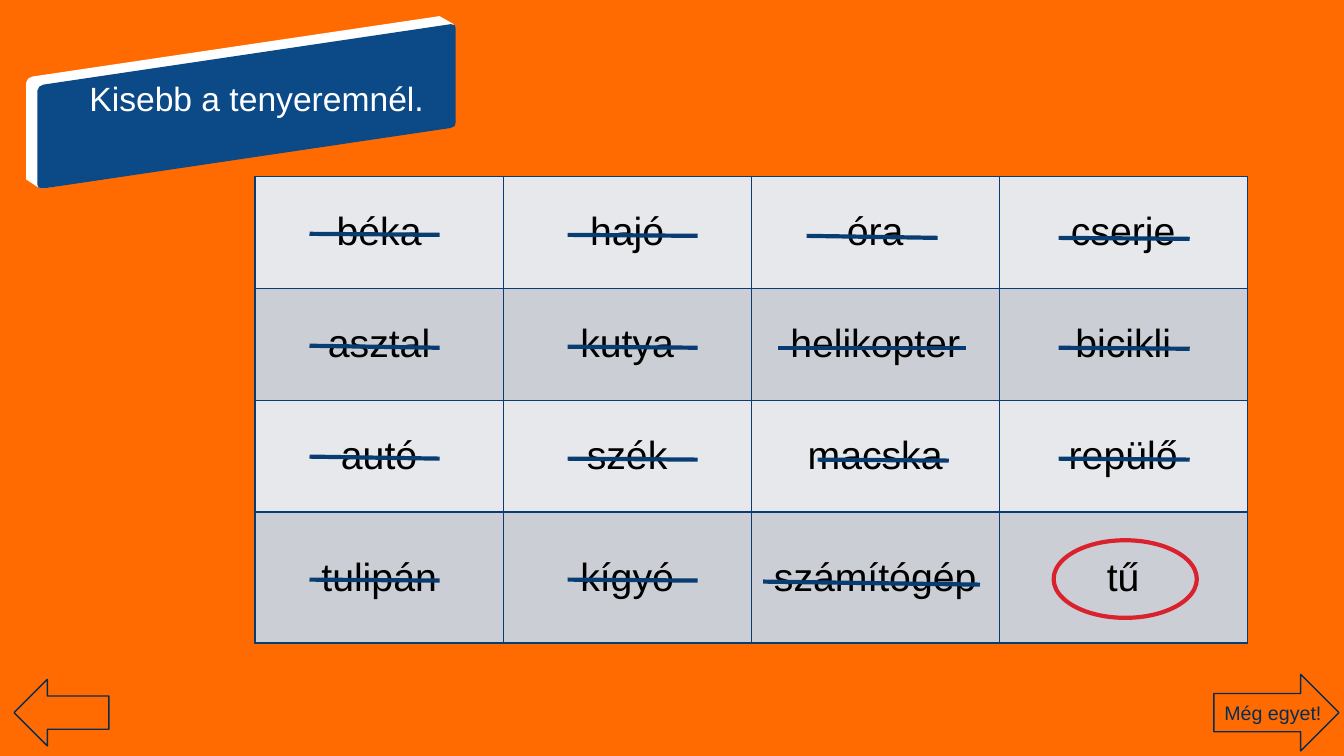
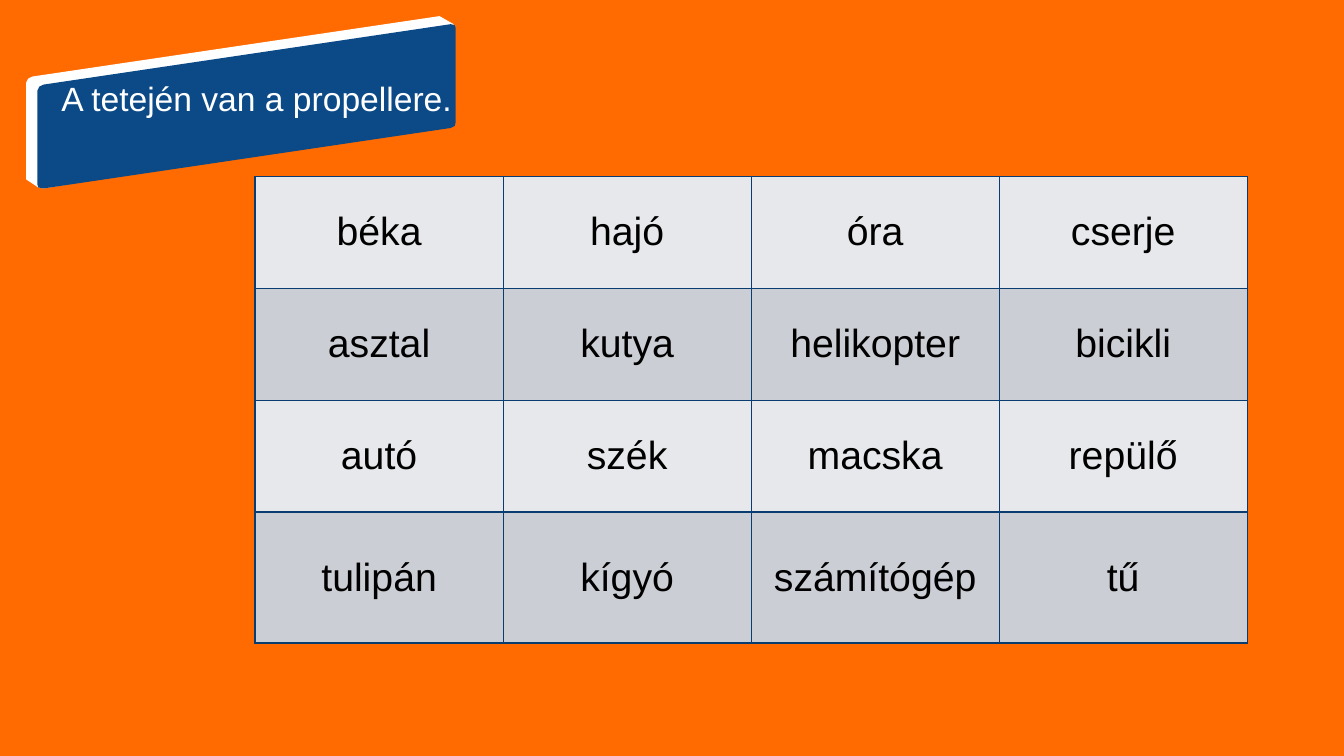
from lxml import etree
from pptx import Presentation
from pptx.dml.color import RGBColor
from pptx.enum.shapes import MSO_CONNECTOR, MSO_SHAPE
from pptx.enum.text import MSO_ANCHOR, PP_ALIGN
from pptx.oxml.ns import qn
from pptx.util import Inches, Pt

CENTER = PP_ALIGN.CENTER
MIDDLE = MSO_ANCHOR.MIDDLE
STRAIGHT = MSO_CONNECTOR.STRAIGHT
LEFT_ARROW, RIGHT_ARROW = MSO_SHAPE.LEFT_ARROW, MSO_SHAPE.RIGHT_ARROW
OVAL = MSO_SHAPE.OVAL

ORANGE = RGBColor(0xFF, 0x6B, 0x00)
NAVY = RGBColor(0x09, 0x3C, 0x71)
BANNER_BLUE = RGBColor(0x0C, 0x4A, 0x87)
ARROW_NAVY = RGBColor(0x07, 0x2C, 0x54)
RED = RGBColor(0xD9, 0x22, 0x2E)
WHITE = RGBColor(0xFF, 0xFF, 0xFF)
BLACK = RGBColor(0, 0, 0)
BANDS = [RGBColor(0xE7, 0xE8, 0xEB), RGBColor(0xCC, 0xCE, 0xD5)]

TITLES = ["Kisebb a tenyeremnél.", "A tetején van a propellere."]
WORDS = [
    ["béka", "hajó", "óra", "cserje"],
    ["asztal", "kutya", "helikopter", "bicikli"],
    ["autó", "szék", "macska", "repülő"],
    ["tulipán", "kígyó", "számítógép", "tű"],
]
ROW_HEIGHTS = [1.11, 1.11, 1.11, 1.3]
COLUMN_WIDTH = 2.46

# Tilted banner: white edge behind, blue face in front
BANNER = [
    (WHITE, [(0.26, 0.82), (0.28, 0.78), (0.32, 0.76), (4.36, 0.16), (4.5, 0.24),
             (4.4, 1.2), (0.43, 1.87), (0.38, 1.86), (0.26, 1.78)]),
    (BANNER_BLUE, [(0.37, 0.9), (0.39, 0.86), (0.43, 0.84), (4.47, 0.24), (4.51, 0.25),
                   (4.52, 0.28), (4.52, 1.21), (4.51, 1.25), (4.47, 1.27),
                   (0.43, 1.87), (0.38, 1.86), (0.37, 1.83)]),
]

# Crossed-out words by column: (left, right, start height, end height)
STRIKES = [
    *[(3.07, 4.36, start, end)
      for start, end in [(2.32, 2.33), (3.43, 3.45), (4.53, 4.55), (5.75, 5.76)]],
    *[(5.63, 6.92, start, start + 0.01) for start in (2.33, 3.44, 4.55, 5.75)],
    (8, 9.3, 2.34, 2.36), (7.72, 9.58, 3.45, 3.45),
    (8.11, 9.41, 4.56, 4.57), (7.57, 9.72, 5.77, 5.8),
    *[(10.5, 11.8, start, start + 0.01) for start in (2.36, 3.45, 4.55)],
]


def write(frame, text, size=28, color=BLACK, font="Arial"):
    """Put one centred line of text into a text frame."""
    para = frame.paragraphs[0]
    para.alignment = CENTER
    span = para.add_run()
    span.text = text
    span.font.size = Pt(size)
    span.font.name = font
    span.font.color.rgb = color


def add_outline(page, kind, left, top, width, height, color, weight):
    """Add an unfilled preset shape."""
    shape = page.shapes.add_shape(kind, Inches(left), Inches(top), Inches(width), Inches(height))
    shape.shadow.inherit = False
    shape.fill.background()
    shape.line.color.rgb = color
    shape.line.width = Pt(weight)


deck = Presentation()
deck.slide_width, deck.slide_height = Inches(13.33), Inches(7.5)

for number, title in enumerate(TITLES):
    page = deck.slides.add_slide(deck.slide_layouts[6])
    page.background.fill.solid()
    page.background.fill.fore_color.rgb = ORANGE

    # Word table
    table = page.shapes.add_table(4, 4, Inches(2.53), Inches(1.75),
                                  Inches(4 * COLUMN_WIDTH), Inches(sum(ROW_HEIGHTS))).table
    table.first_row = table.horz_banding = False
    for column in table.columns:
        column.width = Inches(COLUMN_WIDTH)
    for r, words in enumerate(WORDS):
        table.rows[r].height = Inches(ROW_HEIGHTS[r])
        for c, word in enumerate(words):
            cell = table.cell(r, c)
            cell.vertical_anchor = MIDDLE
            write(cell.text_frame, word)
            properties = cell._tc.get_or_add_tcPr()
            for side in ("a:lnL", "a:lnR", "a:lnT", "a:lnB"):
                border = etree.SubElement(properties, qn(side), w=str(Pt(1)))
                fill = etree.SubElement(border, qn("a:solidFill"))
                etree.SubElement(fill, qn("a:srgbClr"), val=str(NAVY))
            cell.fill.solid()
            cell.fill.fore_color.rgb = BANDS[r % 2]

    # Title banner
    for color, points in BANNER:
        corners = [(Inches(x), Inches(y)) for x, y in points]
        builder = page.shapes.build_freeform(*corners[0])
        builder.add_line_segments(corners[1:], close=True)
        panel = builder.convert_to_shape()
        panel.shadow.inherit = False
        panel.fill.solid()
        panel.fill.fore_color.rgb = color
        panel.line.fill.background()
    box = page.shapes.add_textbox(Inches(0.14), Inches(0.51), Inches(4.61), Inches(1.08))
    frame = box.text_frame
    frame.word_wrap = True
    frame.margin_left, frame.margin_top = Inches(0.2), Inches(0.26)
    frame.margin_right = frame.margin_bottom = 0
    write(frame, title, size=24, color=WHITE)

    if number > 0:
        continue

    # Solved answer and navigation, first slide only
    for left, right, start, end in STRIKES:
        strike = page.shapes.add_connector(STRAIGHT, Inches(left), Inches(start),
                                           Inches(right), Inches(end))
        strike.line.color.rgb = NAVY
        strike.line.width = Pt(3)
        etree.SubElement(strike._element.spPr, qn("a:effectLst"))
    add_outline(page, OVAL, 10.45, 5.36, 1.42, 0.77, RED, 3)
    add_outline(page, LEFT_ARROW, 0.14, 6.74, 0.94, 0.66, ARROW_NAVY, 1)
    add_outline(page, RIGHT_ARROW, 12.04, 6.69, 1.24, 0.76, ARROW_NAVY, 1)
    label = page.shapes.add_textbox(Inches(12.04), Inches(6.9), Inches(1.17), Inches(0.34))
    label.text_frame.word_wrap = True
    label.text_frame.margin_left = label.text_frame.margin_right = 0
    write(label.text_frame, "Még egyet!", size=14, color=ARROW_NAVY)

deck.save("out.pptx")
